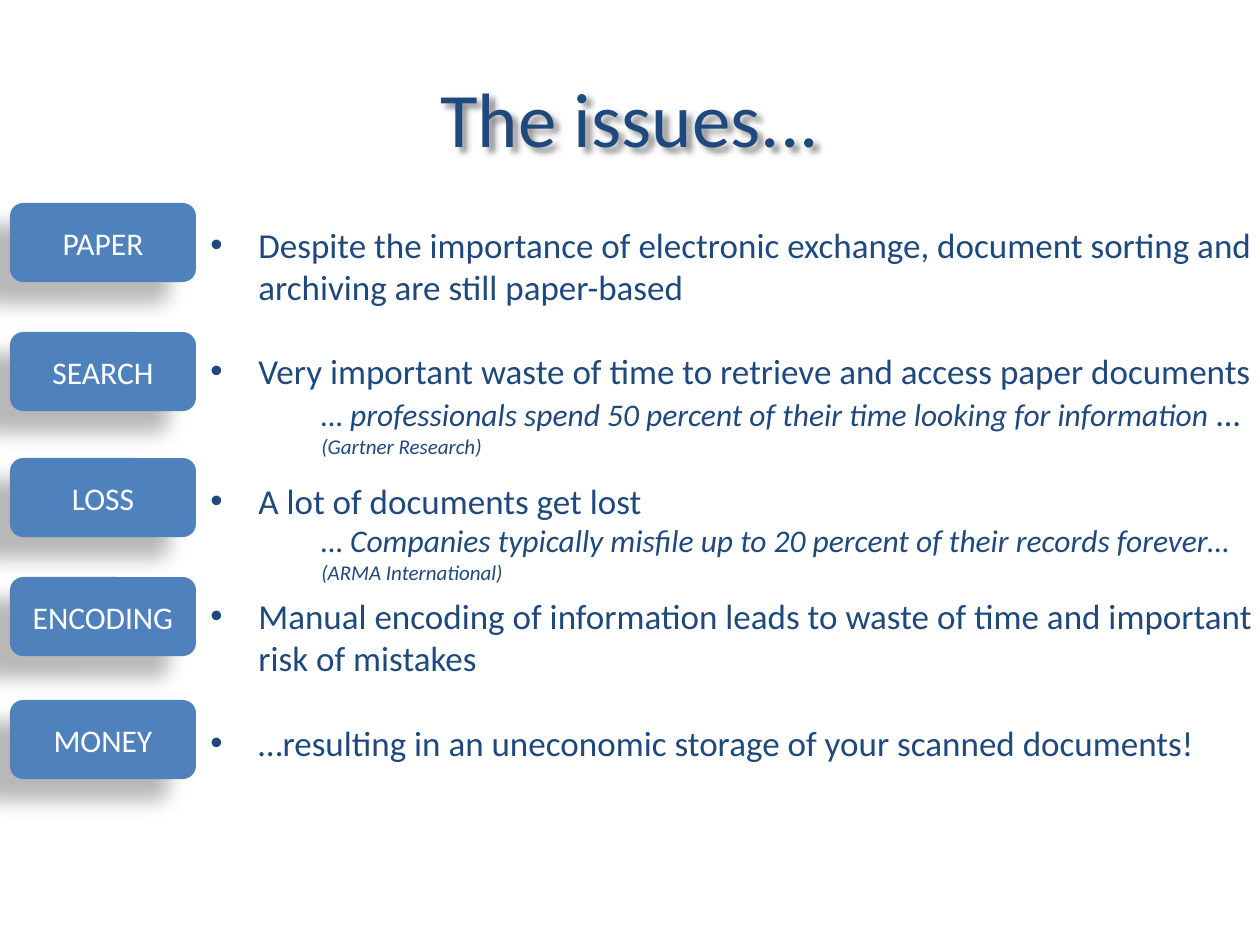
from lxml import etree
from pptx import Presentation
from pptx.dml.color import RGBColor
from pptx.enum.shapes import MSO_SHAPE
from pptx.enum.text import MSO_ANCHOR, PP_ALIGN
from pptx.oxml.ns import qn
from pptx.util import Emu, Pt

NAVY = RGBColor(0x1F, 0x49, 0x7D)
BLUE = RGBColor(0x4F, 0x81, 0xBD)
WHITE = RGBColor(0xFF, 0xFF, 0xFF)
FONT = "Calibri"

LABELS = [("PAPER", 203), ("SEARCH", 332), ("LOSS", 458), ("ENCODING", 577), ("MONEY", 700)]
LABEL_LEFT, LABEL_WIDTH, LABEL_HEIGHT = 10, 186, 79
BULLET_INDENT, QUOTE_INDENT = 48, 111

# Each issue: bullet text, space after it, quote runs (text, size), space after the quote
ISSUES = [
    ("Despite the importance of electronic exchange, document sorting and archiving "
     "are still paper-based", 24, [], 0),
    ("Very important waste of time to retrieve and access paper documents", 0,
     [("… professionals spend 50 percent of their time looking for information", 18),
      (" … ", 20), ("(Gartner Research)", 12)], 12),
    ("A lot of documents get lost", 0,
     [("… Companies typically misfile up to 20 percent of their records forever… ", 18),
      ("(ARMA International)", 12)], 6),
    ("Manual encoding of information leads to waste of time and important risk of mistakes",
     24, [], 0),
    ("…resulting in an uneconomic storage of your scanned documents!", 0, [], 0),
]


def px(value):
    return Emu(round(value * 914400 / 126))


def place(shape, left, top, width, height):
    shape.left, shape.top = px(left), px(top)
    shape.width, shape.height = px(width), px(height)


def add_run(paragraph, text, size, color, italic=False):
    run = paragraph.add_run()
    run.text = text
    font = run.font
    font.name, font.size, font.italic = FONT, Pt(size), italic
    font.color.rgb = color


def add_shadow(shape, blur, distance, angle, opacity):
    """Blur and distance in points, angle in degrees, opacity in percent."""
    shape.shadow.inherit = False
    effects = shape._element.spPr.find(qn("a:effectLst"))
    shadow = etree.SubElement(effects, qn("a:outerShdw"), blurRad=str(Pt(blur)),
                              dist=str(Pt(distance)), dir=str(angle * 60000),
                              algn="tl", rotWithShape="0")
    color = etree.SubElement(shadow, qn("a:srgbClr"), val="000000")
    etree.SubElement(color, qn("a:alpha"), val=str(opacity * 1000))


def set_indent(paragraph, left, first=0):
    properties = paragraph._p.get_or_add_pPr()
    properties.set("marL", str(px(left)))
    properties.set("indent", str(px(first)))
    return properties


def add_bullet(paragraph):
    properties = set_indent(paragraph, BULLET_INDENT, -BULLET_INDENT)
    color = etree.SubElement(properties, qn("a:buClr"))
    etree.SubElement(color, qn("a:srgbClr"), val=str(NAVY))
    etree.SubElement(properties, qn("a:buFont"), typeface="Arial")
    etree.SubElement(properties, qn("a:buChar"), char="•")


def add_issues(slide):
    box = slide.shapes.add_textbox(px(198), px(217), px(1081), px(553))
    frame = box.text_frame
    frame.word_wrap = True
    paragraph = frame.paragraphs[0]
    for index, (text, gap, quote, quote_gap) in enumerate(ISSUES):
        if index:
            paragraph = frame.add_paragraph()
        add_bullet(paragraph)
        paragraph.space_after = Pt(gap)
        add_run(paragraph, text, 20, NAVY)
        if quote:
            paragraph = frame.add_paragraph()
            paragraph.level = 1
            set_indent(paragraph, QUOTE_INDENT)
            paragraph.space_after = Pt(quote_gap)
            for part, size in quote:
                add_run(paragraph, part, size, NAVY, italic=True)


def add_label(slide, text, top):
    label = slide.shapes.add_shape(MSO_SHAPE.ROUNDED_RECTANGLE, px(LABEL_LEFT), px(top),
                                   px(LABEL_WIDTH), px(LABEL_HEIGHT))
    label.fill.solid()
    label.fill.fore_color.rgb = BLUE
    label.line.fill.background()
    add_shadow(label, 11.8, 19.7, 141, 28)
    frame = label.text_frame
    frame.vertical_anchor = MSO_ANCHOR.MIDDLE
    frame.paragraphs[0].alignment = PP_ALIGN.CENTER
    add_run(frame.paragraphs[0], text, 18, WHITE)


def set_title(slide, text):
    title = slide.shapes.title
    place(title, 63, 38, 1134, 158)
    add_shadow(title, 3, 3, 45, 45)
    frame = title.text_frame
    frame.vertical_anchor = MSO_ANCHOR.MIDDLE
    frame.paragraphs[0].alignment = PP_ALIGN.CENTER
    add_run(frame.paragraphs[0], text, 44, NAVY)


def main():
    presentation = Presentation()
    presentation.slide_width, presentation.slide_height = px(1260), px(945)
    slide = presentation.slides.add_slide(presentation.slide_layouts[5])
    set_title(slide, "The issues...")
    add_issues(slide)
    for text, top in LABELS:
        add_label(slide, text, top)
    presentation.save("out.pptx")


if __name__ == "__main__":
    main()
